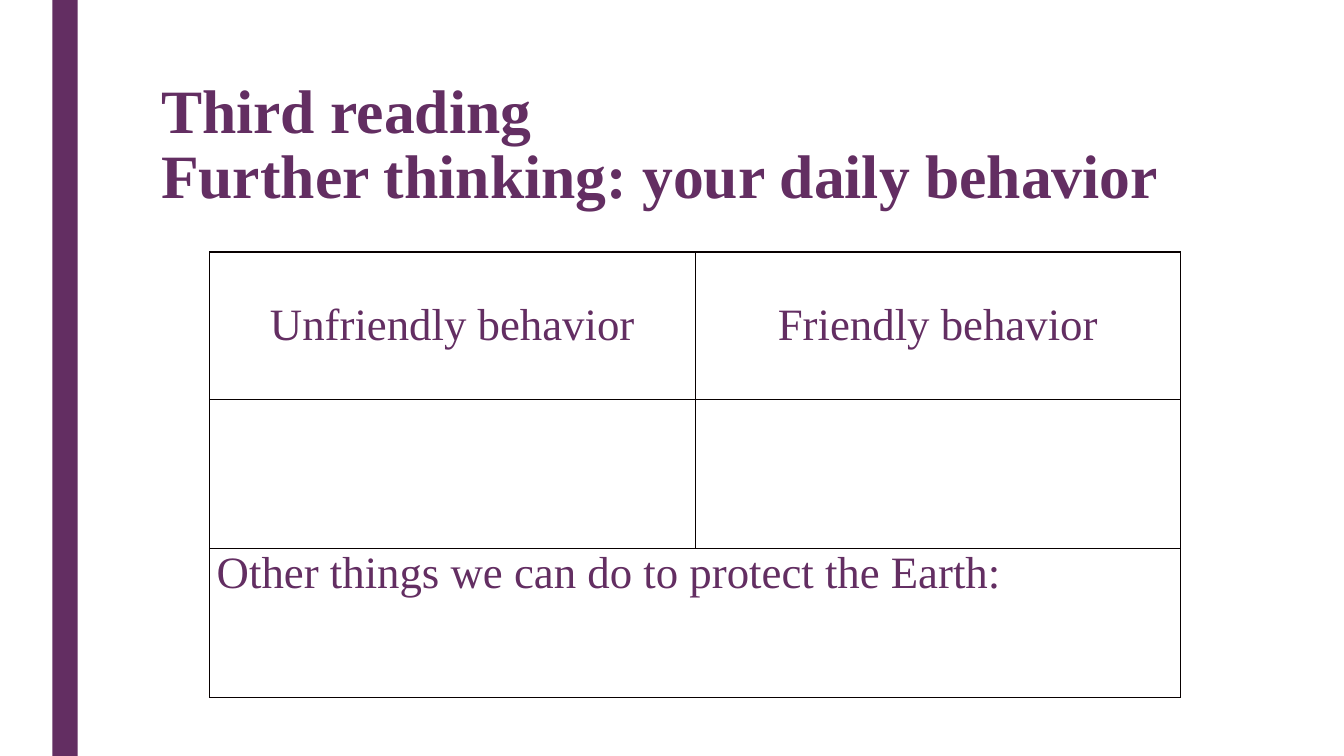
from pptx import Presentation, util as u
from pptx.dml.color import RGBColor
from pptx.enum import shapes, text
from pptx.oxml import parse_xml
from pptx.oxml.ns import nsdecls

PURPLE = RGBColor(0x63, 0x2E, 0x62)
BORDER = RGBColor(0x08, 0x00, 0x00)
FONT = "Times New Roman"
WIDTH, HEIGHT = u.Inches(13.33), u.Inches(7.5)
BEHAVIORS = ["Unfriendly behavior", "Friendly behavior"]
PROTECT = "Other things we can do to protect the Earth:"


def style_runs(p, size, bold=False):
    """Give every run of a paragraph the slide's font and colour."""
    for r in p.runs:
        r.font.name, r.font.size, r.font.bold = FONT, u.Pt(size), bold
        r.font.color.rgb = PURPLE


def add_bar(s):
    """Draw the full-height stripe at the left."""
    bar = s.shapes.add_shape(shapes.MSO_SHAPE.RECTANGLE, u.Inches(0.52), 0, u.Inches(0.25), HEIGHT)
    bar.shadow.inherit = False
    bar.fill.solid()
    bar.fill.fore_color.rgb = PURPLE
    bar.line.fill.background()


def add_title(s, title):
    """Add the bold two-line heading."""
    sp = s.shapes.add_textbox(u.Inches(1.5), HEIGHT // 10, u.Inches(10.5), u.Inches(1.62))
    tf = sp.text_frame
    tf.word_wrap = True
    p = tf.paragraphs[0]
    p.text = title
    p.line_spacing = 0.89
    style_runs(p, 44, bold=True)


def format_cell(cell):
    """Clear a cell's fill, tighten its margins and border all its sides."""
    cell.margin_left = cell.margin_right = u.Inches(0.07)
    cell.margin_top = cell.margin_bottom = 0
    tc_pr = cell._tc.get_or_add_tcPr()
    for side in ("lnL", "lnR", "lnT", "lnB"):
        tc_pr.append(parse_xml(
            f'<a:{side} {nsdecls("a")} w="{u.Pt(1)}"><a:solidFill>'
            f'<a:srgbClr val="{BORDER}"/></a:solidFill></a:{side}>'))
    cell.fill.background()


def set_cell_text(cell, words, centred=False):
    """Write a cell's text, optionally centred both ways."""
    cell.text = words
    p = cell.text_frame.paragraphs[0]
    style_runs(p, 32)
    if centred:
        p.alignment = text.PP_ALIGN.CENTER
        cell.vertical_anchor = text.MSO_ANCHOR.MIDDLE


def add_behavior_table(s):
    """Add the behavior grid with a merged bottom row."""
    table = s.shapes.add_table(3, 2, u.Inches(2.08), HEIGHT // 3, u.Inches(9.63), u.Inches(4.43)).table
    table.first_row = table.horz_banding = False
    for row, height in zip(table.rows, (1.46, 1.48, 1.48)):
        row.height = u.Inches(height)
    for cell in table.iter_cells():
        format_cell(cell)
    for col, words in enumerate(BEHAVIORS):
        set_cell_text(table.cell(0, col), words, centred=True)
    table.cell(2, 0).merge(table.cell(2, 1))
    set_cell_text(table.cell(2, 0), PROTECT)


def main():
    """Build and save the slide."""
    prs = Presentation()
    prs.slide_width, prs.slide_height = WIDTH, HEIGHT
    s = prs.slides.add_slide(prs.slide_layouts[6])
    add_bar(s)
    add_title(s, "Third reading\vFurther thinking: your daily behavior")
    add_behavior_table(s)
    prs.save("out.pptx")


if __name__ == "__main__":
    main()
